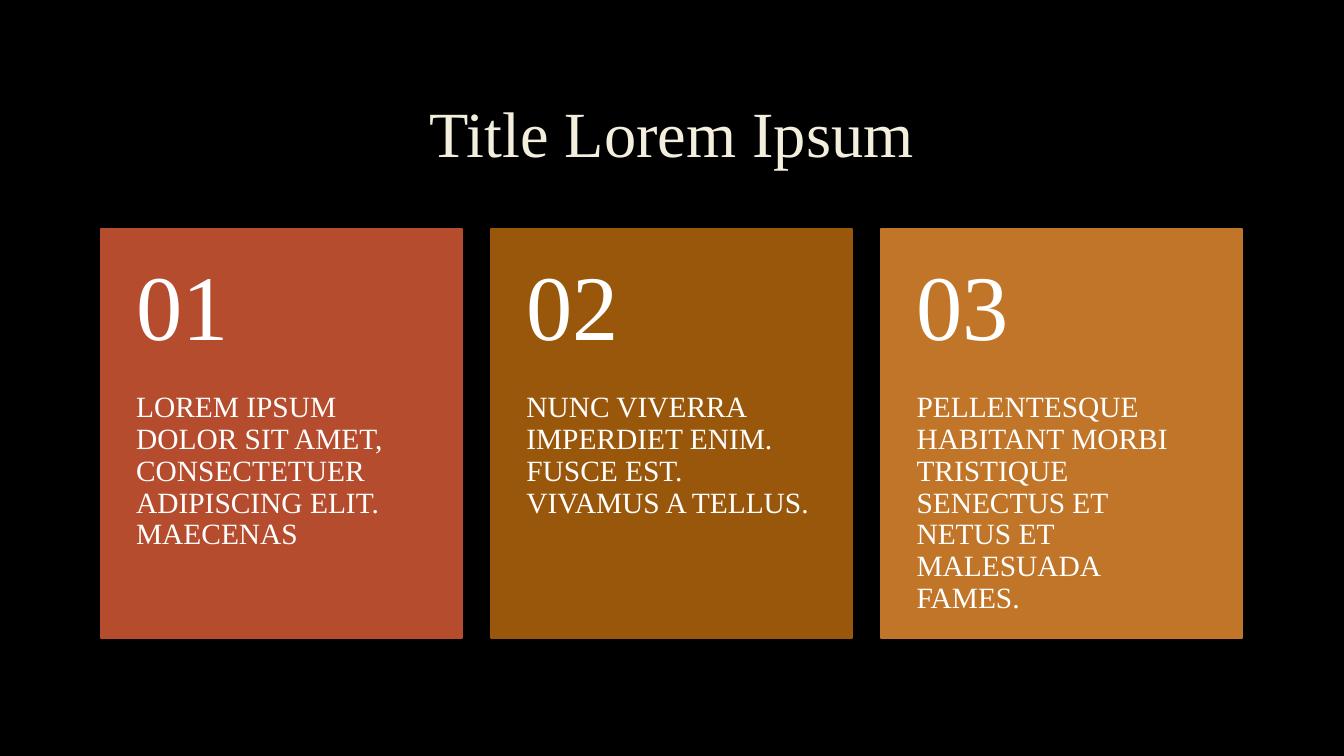
from dataclasses import dataclass

from pptx import Presentation
from pptx import util as u
from pptx.dml.color import RGBColor
from pptx.enum import shapes, text


@dataclass(frozen=True)
class Theme:
    """Hold the colours, font and type sizes."""
    font: str = "Times New Roman"
    back: str = "000000"
    cream: str = "F4EEDC"
    white: str = "FFFFFF"
    fills: tuple = ("B54C2D", "99570C", "C17529")
    title: int = 46
    number: int = 66
    body: int = 21


THEME = Theme()
WIDE, HIGH = 13.33, 7.5
LEFT, SPAN, GAP = 1, 11.32, 0.29
CARDS = (
    "LOREM IPSUM DOLOR SIT AMET, CONSECTETUER ADIPISCING ELIT. MAECENAS",
    "NUNC VIVERRA IMPERDIET ENIM. FUSCE EST. VIVAMUS A TELLUS.",
    "PELLENTESQUE HABITANT MORBI TRISTIQUE SENECTUS ET NETUS ET MALESUADA FAMES.",
)


def inch(*sizes):
    """Turn numbers into inch lengths."""
    return [u.Inches(size) for size in sizes]


def write(shape, words, size, color=THEME.white, align=text.PP_ALIGN.LEFT,
          anchor=text.MSO_ANCHOR.TOP, pad=(0.1, 0.05, 0.1, 0.05)):
    """Put formatted words in a shape."""
    frame = shape.text_frame
    frame.word_wrap = True
    frame.auto_size = text.MSO_AUTO_SIZE.NONE
    frame.vertical_anchor = anchor
    (frame.margin_left, frame.margin_top,
     frame.margin_right, frame.margin_bottom) = inch(*pad)
    para = frame.paragraphs[0]
    para.alignment, para.line_spacing = align, 0.9
    run = para.add_run()
    run.text = words
    run.font.name, run.font.size = THEME.font, u.Pt(size)
    run.font.color.rgb = RGBColor.from_string(color)


def head(slide, box, words):
    """Place the slide title in its box."""
    title = slide.shapes.title
    title.left, title.top, title.width, title.height = inch(*box)
    write(title, words, THEME.title, THEME.cream,
          text.PP_ALIGN.CENTER, text.MSO_ANCHOR.MIDDLE)


def card(slide, box, number, words, color):
    """Draw a numbered card with the number in its top two fifths."""
    left, top, width, height = box
    split = height * 0.4
    group = slide.shapes.add_group_shape().shapes
    panel = group.add_shape(shapes.MSO_SHAPE.RECTANGLE, *inch(*box))
    panel.shadow.inherit = False
    panel.fill.solid()
    panel.fill.fore_color.rgb = RGBColor.from_string(color)
    panel.line.color.rgb = RGBColor.from_string(color)
    panel.line.width = u.Pt(1.25)
    body = group.add_textbox(*inch(left, top + split, width, height - split))
    write(body, words, THEME.body, pad=(0.35, 0, 0.35, 0.36))
    label = group.add_textbox(*inch(left, top, width, split))
    write(label, number, THEME.number, anchor=text.MSO_ANCHOR.MIDDLE,
          pad=(0.35, 0.18, 0.35, 0.18))


def row(slide, box):
    """Share a box between equal cards."""
    left, top, width, height = box
    step = (width + GAP) / len(CARDS)
    for i, (words, color) in enumerate(zip(CARDS, THEME.fills)):
        place = (left + i * step, top, step - GAP, height)
        card(slide, place, f"{i + 1:02}", words, color)


def main():
    """Build and save the slide."""
    deck = Presentation()
    deck.slide_width, deck.slide_height = inch(WIDE, HIGH)
    slide = deck.slides.add_slide(deck.slide_layouts[5])
    slide.background.fill.solid()
    slide.background.fill.fore_color.rgb = RGBColor.from_string(THEME.back)
    head(slide, (LEFT, 0.67, SPAN, 1.38), "Title Lorem Ipsum")
    row(slide, (LEFT, 2.27, SPAN, 4.06))
    deck.save("out.pptx")


if __name__ == "__main__":
    main()
